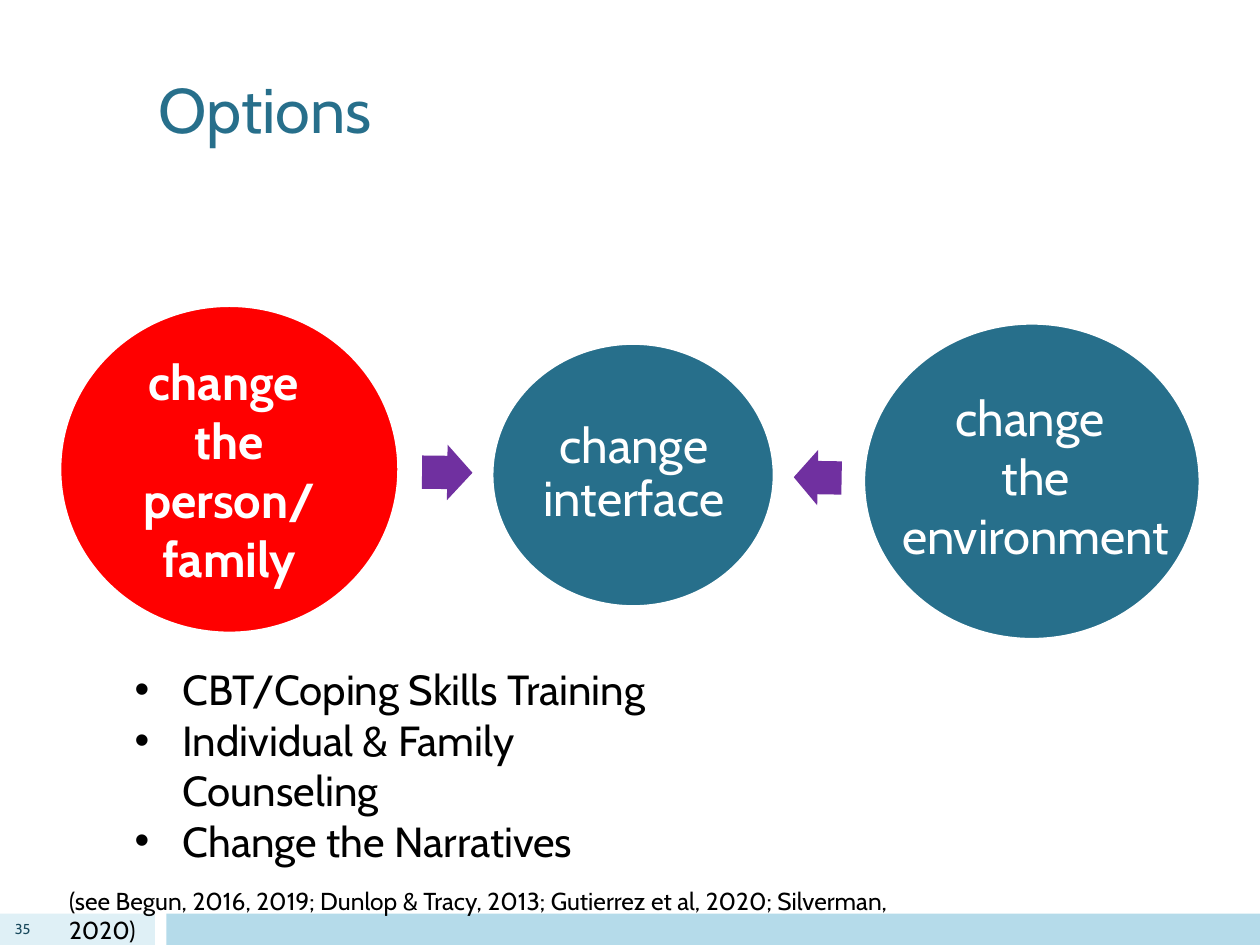
from dataclasses import dataclass

from lxml import etree
from pptx import Presentation
from pptx.dml.color import RGBColor
from pptx.enum.shapes import MSO_SHAPE
from pptx.enum.text import MSO_ANCHOR, PP_ALIGN
from pptx.oxml.ns import qn
from pptx.util import Inches, Pt

RECTANGLE, OVAL, ARROW = MSO_SHAPE.RECTANGLE, MSO_SHAPE.OVAL, MSO_SHAPE.RIGHT_ARROW
LEFT, CENTER, RIGHT = PP_ALIGN.LEFT, PP_ALIGN.CENTER, PP_ALIGN.RIGHT
TOP, MIDDLE = MSO_ANCHOR.TOP, MSO_ANCHOR.MIDDLE


@dataclass(frozen=True)
class Theme:
    """Colours, font and type sizes of the slide."""
    font: str = "Cabin"
    teal: str = "276F8B"
    red: str = "FF0000"
    purple: str = "7030A0"
    white: str = "FFFFFF"
    black: str = "000000"
    navy: str = "1A4A5D"
    pale_band: str = "DFF0F6"
    band: str = "B5DBEA"
    title_size: float = 36
    circle_size: float = 28
    list_size: float = 24
    citation_size: float = 14
    number_size: float = 8.2


THEME = Theme()


def add_filled_shape(shapes, kind, box, color, outline=None):
    """Add a preset shape with a plain fill and an optional outline."""
    shape = shapes.add_shape(kind, *map(Inches, box))
    shape.shadow.inherit = False
    shape.fill.solid()
    shape.fill.fore_color.rgb = RGBColor.from_string(color)
    if outline:
        shape.line.color.rgb = RGBColor.from_string(outline)
        shape.line.width = Pt(1)
    else:
        shape.line.fill.background()
    return shape


def add_bullet(paragraph, indent):
    """Give a paragraph a round bullet with a hanging indent."""
    properties = paragraph._p.get_or_add_pPr()
    properties.set("marL", str(Inches(indent)))
    properties.set("indent", str(-Inches(indent)))
    etree.SubElement(properties, qn("a:buFont")).set("typeface", "Arial")
    etree.SubElement(properties, qn("a:buChar")).set("char", "•")


def add_text(shapes, box, lines, size, color, align=LEFT, anchor=TOP,
             bold=False, inset=None, spacing=None, bullet_indent=None):
    """Add a wrapping text box with one paragraph for each line."""
    frame = shapes.add_textbox(*map(Inches, box)).text_frame
    frame.word_wrap = True
    frame.vertical_anchor = anchor
    if inset is not None:
        frame.margin_left = frame.margin_right = Inches(inset)
        frame.margin_top = frame.margin_bottom = Inches(inset)
    for index, line in enumerate(lines):
        paragraph = frame.add_paragraph() if index else frame.paragraphs[0]
        paragraph.alignment = align
        if spacing:
            paragraph.line_spacing = spacing
        if bullet_indent:
            add_bullet(paragraph, bullet_indent)
        run = paragraph.add_run()
        run.text = line
        run.font.name = THEME.font
        run.font.size = Pt(size)
        run.font.bold = bold
        run.font.color.rgb = RGBColor.from_string(color)
    return frame


def add_circle(slide, circle_box, label_box, lines, color, bold=False, spacing=None):
    """Add a group of a circle and its centred label."""
    group = slide.shapes.add_group_shape()
    add_filled_shape(group.shapes, OVAL, circle_box, color, THEME.white)
    add_text(group.shapes, label_box, lines, THEME.circle_size, THEME.white,
             CENTER, MIDDLE, bold, 0.04, spacing)


def add_arrow(slide, box, rotation):
    """Add a block arrow turned by the given degrees."""
    arrow = add_filled_shape(slide.shapes, ARROW, box, THEME.purple)
    arrow.adjustments[0] = 0.6
    arrow.adjustments[1] = 0.5
    arrow.rotation = rotation


def main():
    """Build the slide and save it."""
    presentation = Presentation()
    presentation.slide_width, presentation.slide_height = Inches(10), Inches(7.5)
    slide = presentation.slides.add_slide(presentation.slide_layouts[6])
    shapes = slide.shapes

    add_filled_shape(shapes, RECTANGLE, (0, 7.25, 1.23, 0.25), THEME.pale_band)
    add_filled_shape(shapes, RECTANGLE, (1.32, 7.25, 8.68, 0.25), THEME.band)

    add_circle(slide, (3.91, 2.73, 2.23, 2.08), (4.24, 3.03, 1.58, 1.47),
               ["change interface"], THEME.teal, spacing=0.9)
    add_arrow(slide, (6.3, 3.57, 0.38, 0.44), 181)
    add_circle(slide, (6.86, 2.57, 2.66, 2.5), (7.09, 2.84, 2.26, 1.87),
               ["change ", "the environment"], THEME.teal)
    add_arrow(slide, (3.35, 3.53, 0.4, 0.44), 0.7)
    add_circle(slide, (0.48, 2.43, 2.68, 2.59), (0.87, 2.81, 1.9, 1.83),
               ["change ", "the person/ family"], THEME.red, bold=True)

    add_text(shapes, (1.16, 0.51, 7.69, 1.29), ["Options"],
             THEME.title_size, THEME.teal)
    add_text(shapes, (0.97, 5.22, 4.82, 1.31),
             ["CBT/Coping Skills Training", "Individual & Family Counseling",
              "Change the Narratives"],
             THEME.list_size, THEME.black, bullet_indent=0.38)
    add_text(shapes, (0.45, 6.98, 7.02, 0.34),
             ["(see Begun, 2016, 2019; Dunlop & Tracy, 2013; "
              "Gutierrez et al, 2020; Silverman, 2020)"],
             THEME.citation_size, THEME.black)
    number = add_text(shapes, (0, 7.25, 0.34, 0.25), ["35"],
                      THEME.number_size, THEME.navy, RIGHT, MIDDLE)
    number.margin_left = 0

    presentation.save("out.pptx")


if __name__ == "__main__":
    main()
